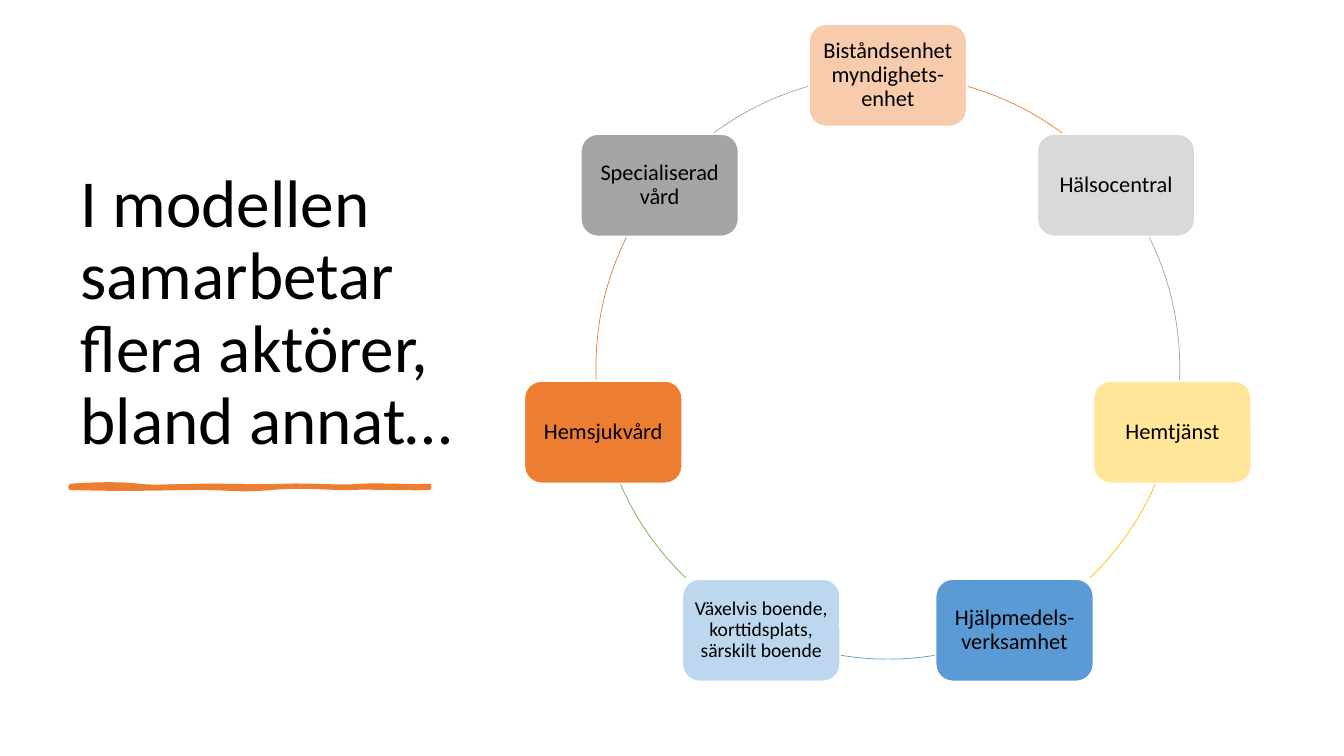
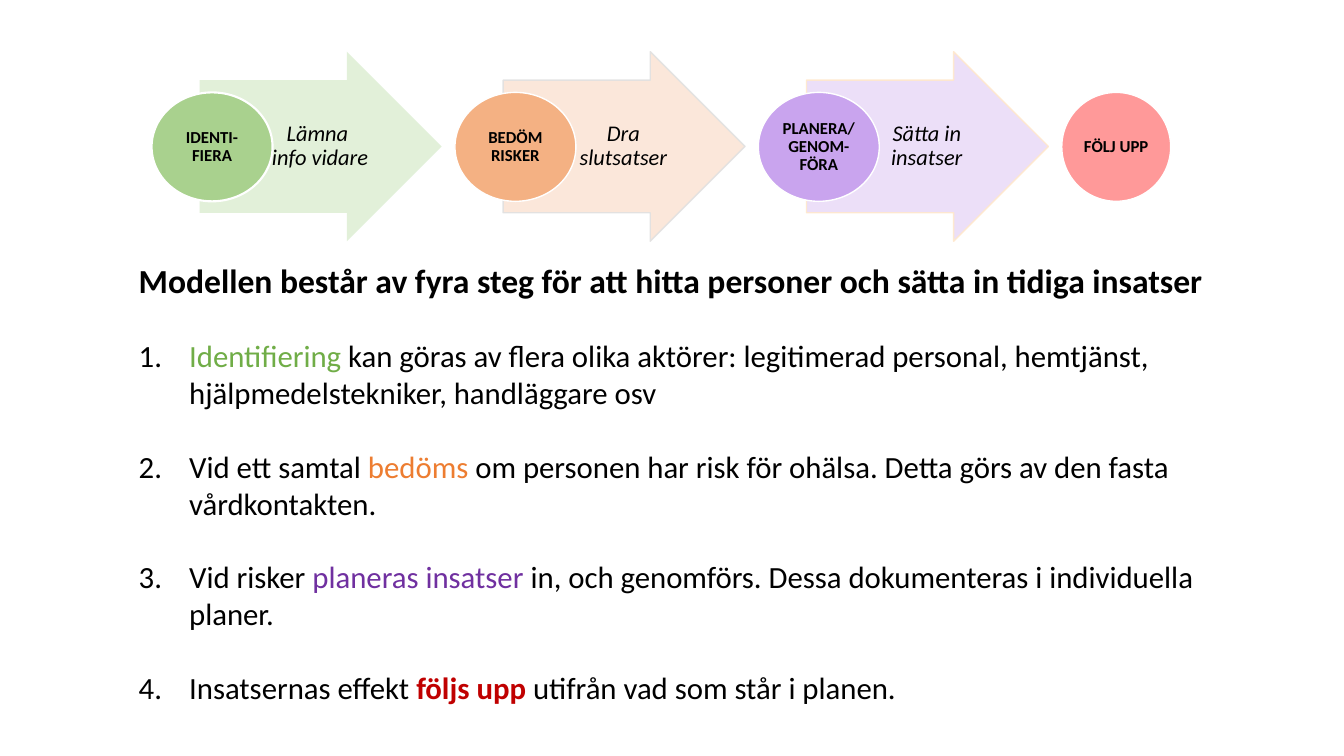
from dataclasses import dataclass
from math import cos, radians, sin

from lxml import etree
from pptx import Presentation
from pptx.dml.color import RGBColor
from pptx.enum.shapes import MSO_SHAPE
from pptx.enum.text import MSO_ANCHOR, PP_ALIGN
from pptx.oxml.ns import qn
from pptx.util import Pt

ROUND_RECT = MSO_SHAPE.ROUNDED_RECTANGLE
ARC = MSO_SHAPE.ARC
OVAL = MSO_SHAPE.OVAL
RIGHT_ARROW = MSO_SHAPE.RIGHT_ARROW
TOP, MIDDLE, BOTTOM = MSO_ANCHOR.TOP, MSO_ANCHOR.MIDDLE, MSO_ANCHOR.BOTTOM
LEFT, CENTER = PP_ALIGN.LEFT, PP_ALIGN.CENTER


@dataclass(frozen=True)
class Theme:
    font: str = "Calibri"
    black: str = "000000"
    white: str = "FFFFFF"
    orange: str = "ED7D31"
    pale_orange: str = "F8CBAD"
    gray: str = "A5A5A5"
    pale_gray: str = "D9D9D9"
    gold: str = "FFC000"
    pale_gold: str = "FFE699"
    blue: str = "5B9BD5"
    pale_blue: str = "BDD7EE"
    green: str = "70AD47"
    purple: str = "7030A0"
    red: str = "C00000"
    green_step: str = "A9D18E"
    orange_step: str = "F4B183"
    purple_step: str = "C9A4EE"
    red_step: str = "FF9999"
    green_arrow: str = "E2F0D9"
    orange_arrow: str = "FBE5D6"
    purple_arrow: str = "EADCF8"
    orange_arrow_edge: str = "E1E1E1"
    purple_arrow_edge: str = "FFE8CC"
    title: int = 48
    heading: int = 24
    body: int = 22
    label: int = 16
    small_label: int = 14
    step: int = 12


T = Theme()

ACTORS = [
    ("Biståndsenhet myndighets-enhet", T.pale_orange, T.orange, T.label),
    ("Hälsocentral", T.pale_gray, T.gray, T.label),
    ("Hemtjänst", T.pale_gold, T.gold, T.label),
    ("Hjälpmedels-verksamhet", T.blue, T.blue, T.label),
    ("Växelvis boende, korttidsplats, särskilt boende", T.pale_blue, T.green, T.small_label),
    ("Hemsjukvård", T.orange, T.orange, T.label),
    ("Specialiserad vård", T.gray, T.gray, T.label),
]
RING_X, RING_Y, RING_R = 634.2, 262.3, 208.5
BOX_W, BOX_H, BOX_GAP = 112.5, 73, 0.7

BRUSH_X, BRUSH_Y, BRUSH_W, BRUSH_H = 50.4, 347, 256.3, 1.5
BRUSH_OUTLINE = [
    (50.4, 347), (70, 345.6), (87, 345.6), (99, 347), (112, 348.5), (127, 347), (150, 347),
    (174, 347), (187, 347.8), (204, 347), (222, 346.3), (244, 348.5), (258, 347),
    (273, 346.3), (297, 347.8), (306.7, 347), (306.7, 347.8), (306.7, 348.5), (306.7, 348.5),
    (294, 349.2), (262, 347.8), (251, 348.5), (239, 349.2), (219, 346.3), (194, 348.5),
    (169, 350.6), (166, 348.5), (143, 348.5), (120, 348.5), (95, 349.9), (50.4, 348.5),
    (50.4, 348.5), (50.4, 347.8), (50.4, 347),
]
BRUSH_BODY = [
    (50.4, 347), (73, 348.5), (79, 347.8), (99, 347), (120, 346.3), (122, 345.6), (143, 347),
    (164, 348.5), (188, 347.8), (199, 347), (211, 346.3), (235, 349.2), (248, 347),
    (261, 345.6), (286, 349.9), (306.7, 347), (306.7, 347.8), (306.7, 347.8), (306.7, 348.5),
    (297, 348.5), (268, 350.6), (256, 348.5), (243, 347), (222, 348.5), (199, 348.5),
    (176, 348.5), (173, 347.8), (156, 348.5), (139, 349.2), (129, 347.8), (104, 348.5),
    (80, 349.2), (66, 348.5), (50.4, 348.5), (50.4, 347.8), (50.4, 347.8), (50.4, 347),
]

STEPS = [
    ("IDENTI-FIERA", T.green_step, 1.5),
    ("BEDÖM RISKER", T.orange_step, 1),
    ("PLANERA/\nGENOM-FÖRA", T.purple_step, 1),
    ("FÖLJ UPP", T.red_step, 1),
]
ARROWS = [
    ("Lämna \ninfo vidare", T.green_arrow, None, 100),
    ("Dra slutsatser", T.orange_arrow, T.orange_arrow_edge, 90),
    ("Sätta in insatser", T.purple_arrow, T.purple_arrow_edge, 90),
]
STEP_X, STEP_Y, STEP_W, STEP_H = 108.3, 66, 86.4, 77.8
STEP_PITCH = 216.7
ARROW_DX, ARROW_Y, ARROW_W, ARROW_H = 34.4, 36.9, 172.8, 135.4

HEADING = "Modellen består av fyra steg för att hitta personer och sätta in tidiga insatser"
POINTS = [
    ("", "Identifiering", T.green, False,
     " kan göras av flera olika aktörer: legitimerad personal, hemtjänst, "
     "hjälpmedelstekniker, handläggare osv"),
    ("Vid ett samtal ", "bedöms", T.orange, False,
     " om personen har risk för ohälsa. Detta görs av den fasta vårdkontakten."),
    ("Vid risker ", "planeras insatser ", T.purple, False,
     "in, och genomförs. Dessa dokumenteras i individuella planer."),
    ("Insatsernas effekt ", "följs upp ", T.red, True,
     "utifrån vad som står i planen."),
]


def rgb(color):
    return RGBColor.from_string(color)


def add_text(p, text, size=T.body, color=T.black, bold=False, italic=False):
    for i, line in enumerate(text.split("\n")):
        if i:
            p.add_line_break()
        r = p.add_run()
        r.text = line
        r.font.name = T.font
        r.font.size = Pt(size)
        r.font.color.rgb = rgb(color)
        r.font.bold = bold
        r.font.italic = italic


def set_frame(sp, anchor=TOP, insets=(7.2, 3.6, 7.2, 3.6), align=LEFT, spacing=None):
    tf = sp.text_frame
    tf.word_wrap = True
    tf.vertical_anchor = anchor
    tf.margin_left, tf.margin_top, tf.margin_right, tf.margin_bottom = map(Pt, insets)
    p = tf.paragraphs[0]
    p.alignment = align
    if spacing:
        p.line_spacing = spacing
    return p


def add_box(s, x, y, w, h):
    return s.shapes.add_textbox(Pt(x), Pt(y), Pt(w), Pt(h))


def paint(sp, fill=None, line=None, width=1, alpha=100):
    sp.shadow.inherit = False
    if fill:
        sp.fill.solid()
        sp.fill.fore_color.rgb = rgb(fill)
    else:
        sp.fill.background()
    if line:
        sp.line.color.rgb = rgb(line)
        sp.line.width = Pt(width)
    else:
        sp.line.fill.background()
    if alpha < 100:
        for color in sp.element.spPr.iter(qn("a:srgbClr")):
            etree.SubElement(color, qn("a:alpha")).set("val", str(alpha * 1000))


def add_shape(s, kind, x, y, w, h, adjust=(), **colors):
    sp = s.shapes.add_shape(kind, Pt(x), Pt(y), Pt(w), Pt(h))
    for i, value in enumerate(adjust):
        sp.adjustments[i] = value
    paint(sp, **colors)
    return sp


def add_label(sp, text, insets, **fmt):
    p = set_frame(sp, MIDDLE, insets, CENTER, 0.9)
    add_text(p, text, **fmt)


def add_curves(outlines, points, **attributes):
    outline = etree.SubElement(outlines, qn("a:path"), w=str(Pt(BRUSH_W)),
                               h=str(Pt(BRUSH_H)), **attributes)
    for i, (x, y) in enumerate(points):
        if i == 0:
            command = etree.SubElement(outline, qn("a:moveTo"))
        elif i % 3 == 1:
            command = etree.SubElement(outline, qn("a:cubicBezTo"))
        etree.SubElement(command, qn("a:pt"), x=str(Pt(x - BRUSH_X)), y=str(Pt(y - BRUSH_Y)))
    etree.SubElement(outline, qn("a:close"))


def add_brush(s):
    right, bottom = Pt(BRUSH_X + BRUSH_W), Pt(BRUSH_Y + BRUSH_H)
    builder = s.shapes.build_freeform(Pt(BRUSH_X), Pt(BRUSH_Y))
    builder.add_line_segments([(right, Pt(BRUSH_Y)), (right, bottom)])
    sp = builder.convert_to_shape()
    outlines = next(sp.element.iter(qn("a:pathLst")))
    outlines.remove(outlines[0])
    add_curves(outlines, BRUSH_OUTLINE, fill="none")
    add_curves(outlines, BRUSH_BODY, stroke="0")
    paint(sp, fill=T.orange, line=T.orange, width=3)


def ring_point(angle):
    return RING_X + RING_R * cos(radians(angle)), RING_Y + RING_R * sin(radians(angle))


def leave_box(center, direction):
    cx, cy = ring_point(center)
    angle, x, y = center, cx, cy
    while abs(x - cx) < BOX_W / 2 + BOX_GAP and abs(y - cy) < BOX_H / 2 + BOX_GAP:
        angle += 0.1 * direction
        x, y = ring_point(angle)
    return angle


def add_ring(s):
    pitch = 360 / len(ACTORS)
    for i, (text, fill, arc_color, size) in enumerate(ACTORS):
        angle = -90 + i * pitch
        x, y = ring_point(angle)
        sp = add_shape(s, ROUND_RECT, x - BOX_W / 2, y - BOX_H / 2, BOX_W, BOX_H,
                       fill=fill, line=T.white)
        add_label(sp, text, [size * 0.3] * 4, size=size)
        ends = leave_box(angle, 1), leave_box(angle + pitch, -1)
        add_shape(s, ARC, RING_X - RING_R, RING_Y - RING_R, 2 * RING_R, 2 * RING_R,
                  [end % 360 * 0.6 for end in ends], line=arc_color, width=0.5)


def add_process(s):
    for i, (text, fill, width) in enumerate(STEPS):
        x = STEP_X + i * STEP_PITCH
        w = STEP_H
        if i < len(ARROWS):
            w = STEP_W
            action, tint, edge, alpha = ARROWS[i]
            arrow = add_shape(s, RIGHT_ARROW, x + ARROW_DX, ARROW_Y, ARROW_W, ARROW_H,
                              (0.7, 0.5), fill=tint, line=edge, alpha=alpha)
            add_label(arrow, action, (46.4, 1, 0, 1), size=T.label, italic=True)
        sp = add_shape(s, OVAL, x, STEP_Y, w, STEP_H, fill=fill, line=T.white, width=width)
        add_label(sp, text, [0.7] * 4, size=T.step, bold=True)


def number_paragraph(p, indent=36):
    pPr = p._p.get_or_add_pPr()
    pPr.set("marL", str(Pt(indent)))
    pPr.set("indent", str(-Pt(indent)))
    bullet_color = etree.SubElement(pPr, qn("a:buClr"))
    etree.SubElement(bullet_color, qn("a:srgbClr")).set("val", T.black)
    etree.SubElement(pPr, qn("a:buFont")).set("typeface", "+mj-lt")
    etree.SubElement(pPr, qn("a:buAutoNum")).set("type", "arabicPeriod")


def add_points(s):
    sp = add_box(s, 92, 182.2, 818, 330)
    add_text(set_frame(sp), HEADING, size=T.heading, bold=True)
    for before, key, color, bold, after in POINTS:
        p = sp.text_frame.add_paragraph()
        p.space_before = Pt(26.2)
        number_paragraph(p)
        if before:
            add_text(p, before)
        add_text(p, key, color=color, bold=bold)
        add_text(p, after)


def actors_slide(s):
    title = add_box(s, 50.4, 50.2, 281.5, 281.5)
    add_text(set_frame(title, BOTTOM, spacing=0.9),
             "I modellen samarbetar flera aktörer, bland annat…", size=T.title)
    add_brush(s)
    add_ring(s)


def steps_slide(s):
    add_points(s)
    add_process(s)


def main():
    prs = Presentation()
    prs.slide_width, prs.slide_height = Pt(960), Pt(540)
    for build in (actors_slide, steps_slide):
        build(prs.slides.add_slide(prs.slide_layouts[6]))
    prs.save("out.pptx")


if __name__ == "__main__":
    main()
